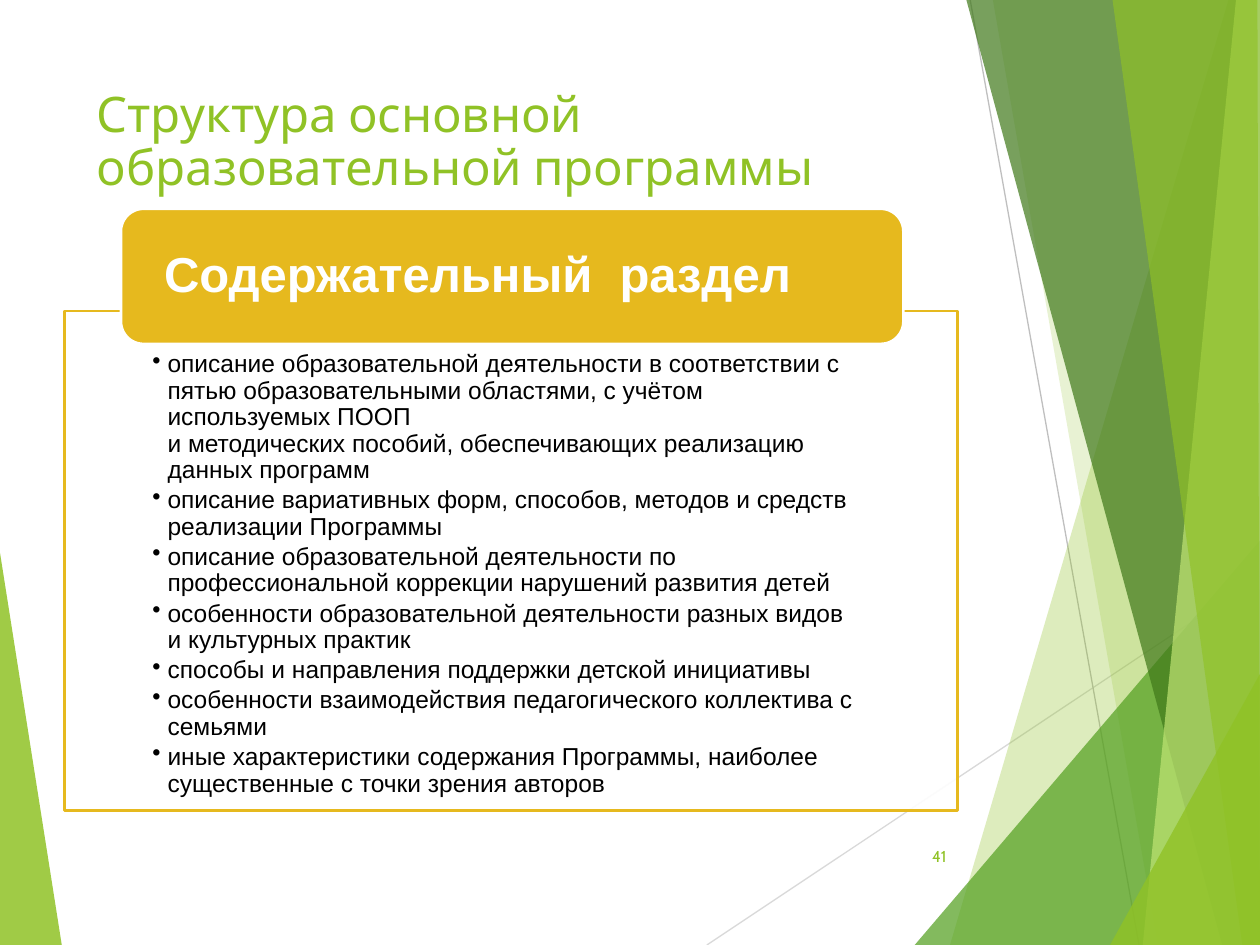
from lxml.etree import SubElement
from pptx import Presentation
from pptx.dml.color import RGBColor
from pptx.enum.shapes import MSO_CONNECTOR, MSO_SHAPE
from pptx.enum.text import MSO_ANCHOR, PP_ALIGN
from pptx.oxml.ns import qn
from pptx.util import Inches, Pt

GREEN, GOLD, WHITE = "90C226", "E6B91E", "FFFFFF"


def paint(fill, color, opacity=100):
    fill.solid()
    fill.fore_color.rgb = RGBColor.from_string(color)
    if opacity < 100:
        color_element = fill._xPr.find(qn("a:solidFill"))[0]
        SubElement(color_element, qn("a:alpha"), val=str(opacity * 1000))


def format_paragraph(paragraph, font_name, size, color, bold=False, spacing=0.9, after=0):
    paragraph.line_spacing = spacing
    paragraph.space_after = Pt(after)
    for run in paragraph.runs:
        run.font.name = font_name
        run.font.size = Pt(size)
        run.font.bold = bold
        paint(run.font.fill, color)


presentation = Presentation()
presentation.slide_width = Inches(10)
presentation.slide_height = Inches(7.5)
slide = presentation.slides.add_slide(presentation.slide_layouts[6])
shapes = slide.shapes

# One column is 1 % of the slide width, one row 1 % of its height
column = presentation.slide_width / 100
row = presentation.slide_height / 100

# Background: left wedge, two thin lines, then the overlapping facets on the right
facets = [
    (GREEN, 85, [(0, 58.5), (4.9, 100), (0, 100)]),
    ("D9D9D9", None, [(56.1, 100), (100, 61)]),
    ("BFBFBF", None, [(77, 0), (90.4, 100)]),
    (GREEN, 30, [(97.5, 0), (75.4, 100), (100, 100), (100, 0)]),
    (GREEN, 20, [(78.8, 0), (91.9, 100), (100, 100), (100, 0)]),
    ("54A021", 72, [(72.6, 100), (100, 57.2), (100, 100)]),
    ("3F7819", 70, [(76.7, 0), (97, 100), (100, 100), (100, 0)]),
    ("C0E474", 70, [(98.1, 0), (90.7, 100), (100, 100), (100, 0)]),
    (GREEN, 65, [(88.3, 0), (98.6, 100), (100, 100), (99.8, 0)]),
    (GREEN, 80, [(88.1, 100), (100, 71.3), (100, 100)]),
]
for color, opacity, corners in facets:
    points = [(round(x * column), round(y * row)) for x, y in corners]
    if opacity is None:
        line = shapes.add_connector(MSO_CONNECTOR.STRAIGHT, *points[0], *points[1])
        paint(line.line.fill, color)
        line.line.width = Pt(0.75)
        SubElement(line._element.spPr, qn("a:effectLst"))
    else:
        builder = shapes.build_freeform(*points[0], scale=1.0)
        builder.add_line_segments(points[1:], close=True)
        facet = builder.convert_to_shape()
        facet.shadow.inherit = False
        paint(facet.fill, color, opacity)
        facet.line.fill.background()

# Title and slide number
labels = [
    ("Структура основной образовательной программы", 28, PP_ALIGN.LEFT,
     MSO_ANCHOR.TOP, (6.7, 8.9, 69.4, 19.2)),
    ("41", 9, PP_ALIGN.RIGHT, MSO_ANCHOR.MIDDLE, (70.5, 88.1, 5.6, 5.3)),
]
for text, size, alignment, anchor, (left, top, width, height) in labels:
    label = shapes.add_textbox(round(left * column), round(top * row),
                               round(width * column), round(height * row))
    text_frame = label.text_frame
    text_frame.word_wrap = True
    text_frame.vertical_anchor = anchor
    text_frame.text = text
    text_frame.paragraphs[0].alignment = alignment
    format_paragraph(text_frame.paragraphs[0], "Cabin", size, GREEN)

# Content panel and the section header that overlaps its top edge
items = [
    "описание образовательной деятельности в соответствии с пятью образовательными "
    "областями, с учётом используемых ПООП\vи методических пособий, обеспечивающих "
    "реализацию данных программ",
    "описание вариативных форм, способов, методов и средств реализации Программы",
    "описание образовательной деятельности по профессиональной коррекции нарушений "
    "развития детей",
    "особенности образовательной деятельности разных видов \vи культурных практик",
    "способы и направления поддержки детской инициативы",
    "особенности взаимодействия педагогического коллектива с семьями",
    "иные характеристики содержания Программы, наиболее существенные с точки зрения "
    "авторов",
]
panels = [
    (MSO_SHAPE.RECTANGLE, (5.1, 32.9, 70.9, 52.9), (7, 4.3, 7, 1.5), MSO_ANCHOR.TOP,
     WHITE, 90, GOLD, items, (14, "000000", False, 2.1)),
    (MSO_SHAPE.ROUNDED_RECTANGLE, (9.6, 22.1, 62.1, 14.3), (2.9, 0, 2.9, 0),
     MSO_ANCHOR.MIDDLE, GOLD, 100, WHITE, ["Содержательный  раздел"],
     (28, WHITE, True, 0)),
]
for kind, box, insets, anchor, fill, opacity, outline, texts, style in panels:
    left, top, width, height = box
    panel = shapes.add_shape(kind, round(left * column), round(top * row),
                             round(width * column), round(height * row))
    panel.shadow.inherit = False
    paint(panel.fill, fill, opacity)
    paint(panel.line.fill, outline)
    panel.line.width = Pt(1.5)
    text_frame = panel.text_frame
    text_frame.word_wrap = True
    text_frame.vertical_anchor = anchor
    text_frame.margin_left = round(insets[0] * column)
    text_frame.margin_top = round(insets[1] * row)
    text_frame.margin_right = round(insets[2] * column)
    text_frame.margin_bottom = round(insets[3] * row)
    size, color, bold, after = style
    for index, text in enumerate(texts):
        paragraph = text_frame.paragraphs[0] if index == 0 else text_frame.add_paragraph()
        paragraph.text = text
        paragraph.alignment = PP_ALIGN.LEFT
        format_paragraph(paragraph, "Arial", size, color, bold, after=after)
        if texts is items:
            properties = paragraph._p.get_or_add_pPr()
            indent = round(1.2 * column)
            properties.set("marL", str(indent))
            properties.set("indent", str(-indent))
            SubElement(properties, qn("a:buChar"), char="•")

presentation.save("out.pptx")
